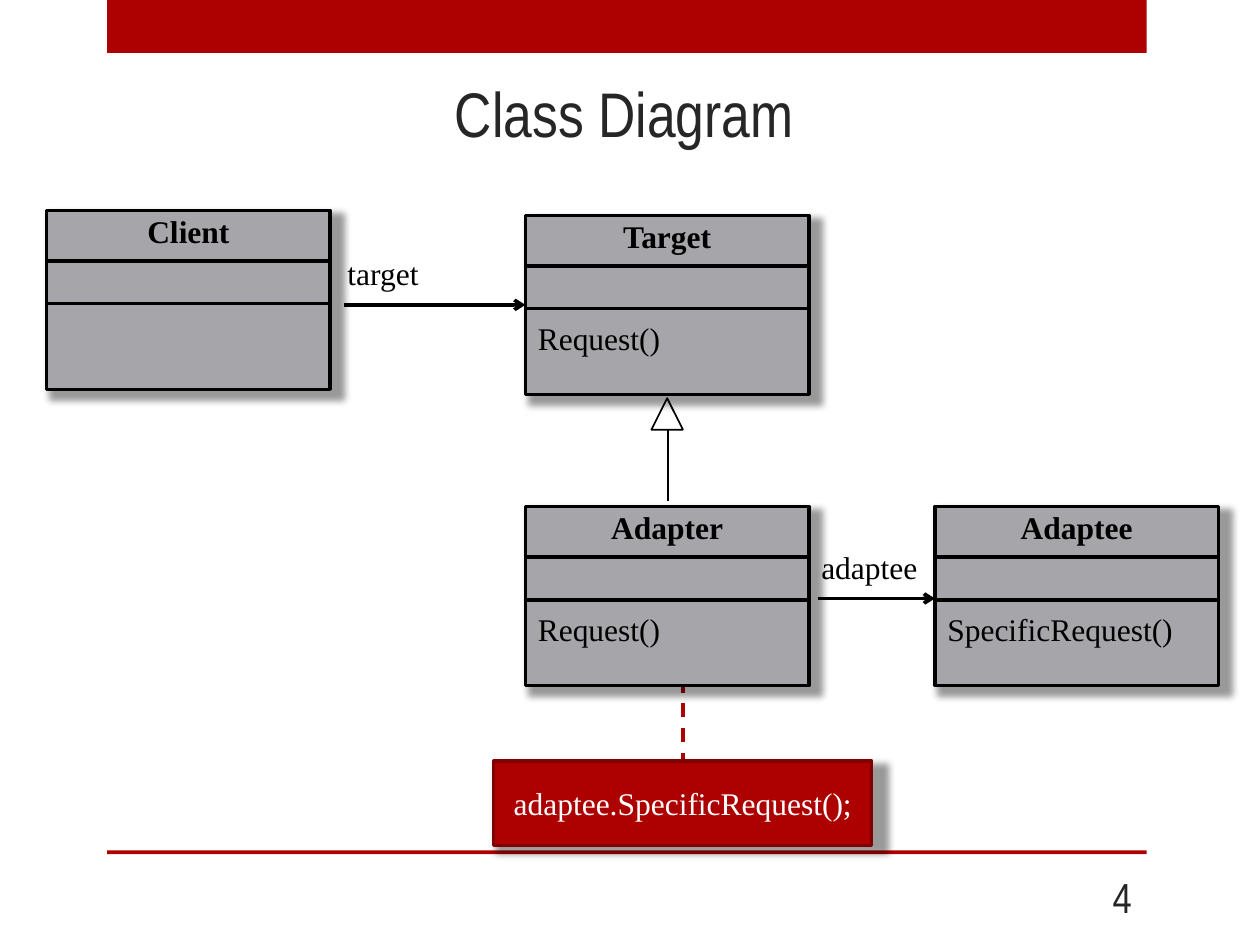
from lxml import etree
from pptx import Presentation
from pptx.dml.color import RGBColor
from pptx.enum.dml import MSO_LINE
from pptx.enum.shapes import MSO_CONNECTOR, MSO_SHAPE
from pptx.enum.text import MSO_ANCHOR, PP_ALIGN
from pptx.oxml.ns import qn
from pptx.util import Inches, Pt

RECT, TRIANGLE = MSO_SHAPE.RECTANGLE, MSO_SHAPE.ISOSCELES_TRIANGLE
STRAIGHT, DASH = MSO_CONNECTOR.STRAIGHT, MSO_LINE.DASH
LEFT, CENTER, RIGHT = PP_ALIGN.LEFT, PP_ALIGN.CENTER, PP_ALIGN.RIGHT
TOP, MIDDLE = MSO_ANCHOR.TOP, MSO_ANCHOR.MIDDLE

RED, DARK, GRAY = "AD0101", "800101", "A5A5AA"
BLACK, WHITE, INK = "000000", "FFFFFF", "262626"
SERIF, SANS = "Times New Roman", "Arial Narrow"

# Content: class name, method, left, top
CLASSES = [
    ("Target", "Request()", 4.17, 1.71),
    ("Client", "", 0.37, 1.67),
    ("Adapter", "Request()", 4.17, 4.02),
    ("Adaptee", "SpecificRequest()", 7.42, 4.02),
]
BOX_W, BOX_H = 2.25, 1.42
RULES = (0.4, 0.74)  # dividers, from the box top
# Association: label, label left and top, arrow start, end and height
LINKS = [
    ("target", 2.66, 1.97, 2.73, 4.17, 2.42),
    ("adaptee", 6.42, 4.3, 6.49, 7.42, 4.75),
]
NOTE = "adaptee.SpecificRequest();"
BARS = [(0.85, 0, 8.25, 0.42), (0.85, 6.75, 8.25, 0.03)]


def color(code):
    return RGBColor.from_string(code)


def put_text(shape, text, size=18, font=SERIF, ink=BLACK, bold=False,
             align=LEFT, anchor=TOP, wrap=False):
    frame = shape.text_frame
    frame.text = text
    frame.word_wrap = wrap
    frame.vertical_anchor = anchor
    par = frame.paragraphs[0]
    par.alignment = align
    par.font.size, par.font.name, par.font.bold = Pt(size), font, bold
    par.font.color.rgb = color(ink)


def add_label(slide, text, x, y, w, h=0.4, **style):
    box = slide.shapes.add_textbox(*map(Inches, (x, y, w, h)))
    put_text(box, text, **style)


def add_shadow(shape):
    effects = shape._element.spPr.find(qn("a:effectLst"))
    outer = etree.SubElement(effects, qn("a:outerShdw"), blurRad=str(Pt(4)),
                             dist=str(Pt(3)), dir="2700000", algn="tl",
                             rotWithShape="0", sx="103000", sy="103000")
    tint = etree.SubElement(outer, qn("a:srgbClr"), val=BLACK)
    etree.SubElement(tint, qn("a:alpha"), val="40000")


def add_box(slide, kind, x, y, w, h, fill=None, line=None, width=2,
            shadow=False):
    shape = slide.shapes.add_shape(kind, *map(Inches, (x, y, w, h)))
    shape.shadow.inherit = False
    if fill:
        shape.fill.solid()
        shape.fill.fore_color.rgb = color(fill)
    else:
        shape.fill.background()
    if line:
        shape.line.color.rgb = color(line)
        shape.line.width = Pt(width)
    else:
        shape.line.fill.background()
    if shadow:
        add_shadow(shape)
    return shape


def add_line(slide, x1, y1, x2, y2, ink=BLACK, width=2, dash=None,
             arrow=False):
    link = slide.shapes.add_connector(STRAIGHT, *map(Inches, (x1, y1, x2, y2)))
    link.line.color.rgb = color(ink)
    link.line.width = Pt(width)
    if dash:
        link.line.dash_style = dash
    if arrow:
        etree.SubElement(link.line._get_or_add_ln(), qn("a:tailEnd"),
                         type="arrow")
    etree.SubElement(link._element.spPr, qn("a:effectLst"))


def add_class(slide, name, method, x, y):
    add_box(slide, RECT, x, y, BOX_W, BOX_H, GRAY, BLACK, shadow=True)
    for drop in RULES:
        add_line(slide, x, y + drop, x + BOX_W, y + drop)
    add_label(slide, name, x, y - 0.04, BOX_W, bold=True, align=CENTER)
    if method:
        add_label(slide, method, x, y + 0.77, BOX_W)


def main():
    deck = Presentation()
    deck.slide_width, deck.slide_height = Inches(10), Inches(7.5)
    slide = deck.slides.add_slide(deck.slide_layouts[5])

    # Frame: bars, title and slide number
    for bar in BARS:
        add_box(slide, RECT, *bar, fill=RED)
    title = slide.shapes.title
    title.left, title.top, title.width, title.height = map(
        Inches, (0.83, 0.53, 8.25, 0.72))
    put_text(title, "Class Diagram", 36, SANS, INK, align=CENTER,
             anchor=MIDDLE, wrap=True)
    add_label(slide, "4", 8.25, 6.92, 0.83, size=24, font=SANS, ink=INK,
              align=RIGHT, anchor=MIDDLE, wrap=True)

    # Note, tied to the adapter whose box covers the line's upper end
    add_line(slide, 5.42, 5.19, 5.42, 6.04, RED, dash=DASH)
    note = add_box(slide, RECT, 3.92, 6.04, 3, 0.67, RED, DARK, 1.75, True)
    put_text(note, NOTE, ink=WHITE, align=CENTER, anchor=MIDDLE)

    # Classes
    for item in CLASSES:
        add_class(slide, *item)

    # Associations
    for text, x, y, start, end, level in LINKS:
        add_line(slide, start, level, end, level, arrow=True)
        add_label(slide, text, x, y, 1)

    # Inheritance
    add_box(slide, TRIANGLE, 5.17, 3.16, 0.25, 0.25, line=BLACK, width=1)
    add_line(slide, 5.3, 3.41, 5.3, 3.98, width=1.25)

    deck.save("out.pptx")


if __name__ == "__main__":
    main()
